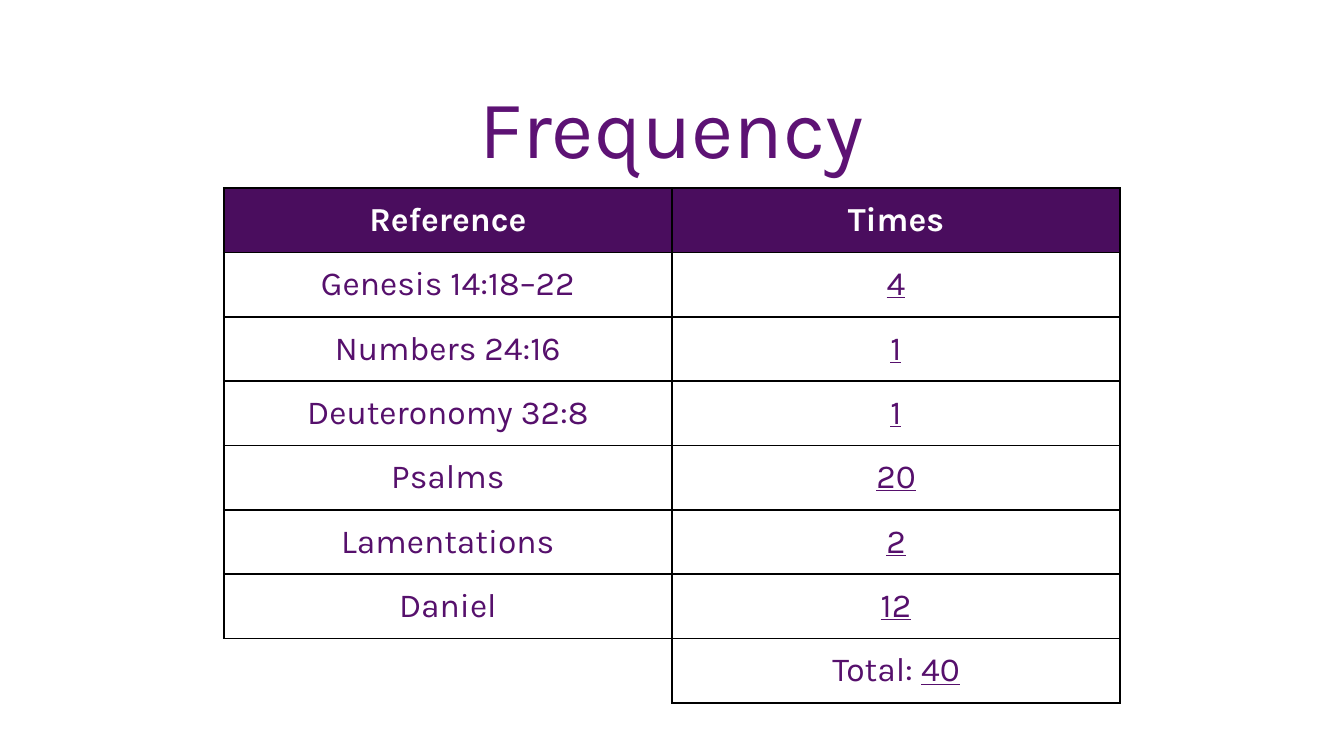
import pptx
import pptx.dml.color
import pptx.enum.text
import pptx.oxml.ns
import pptx.util
from lxml import etree

Inches = pptx.util.Inches
RGBColor = pptx.dml.color.RGBColor

FONT = "Karla"
TITLE_PURPLE = RGBColor(0x5D, 0x12, 0x74)
HEADER_PURPLE = RGBColor(0x4A, 0x0D, 0x5E)
BODY_PURPLE = RGBColor(0x56, 0x10, 0x6C)
WHITE = RGBColor(0xFF, 0xFF, 0xFF)
BLACK = RGBColor(0x00, 0x00, 0x00)

HEADERS = ("Reference", "Times")
FREQUENCIES = (
    ("Genesis 14:18–22", 4),
    ("Numbers 24:16", 1),
    ("Deuteronomy 32:8", 1),
    ("Psalms", 20),
    ("Lamentations", 2),
    ("Daniel", 12),
)
SLIDE_WIDTH = Inches(10)
SLIDE_HEIGHT = SLIDE_WIDTH * 9 // 16
TABLE_WIDTH = Inches(6.67)
TABLE_HEIGHT = Inches(3.83)


def add_text(paragraph, text, size=18, color=BODY_PURPLE, bold=False, underline=False):
    paragraph.alignment = pptx.enum.text.PP_ALIGN.CENTER
    run = paragraph.add_run()
    run.text = text
    run.font.name = FONT
    run.font.size = pptx.util.Pt(size)
    run.font.color.rgb = color
    run.font.bold = bold
    run.font.underline = underline


def set_borders(cell, visible="LRTB"):
    """Draw the named sides in black and hide the others."""
    properties = cell._tc.get_or_add_tcPr()
    for index, side in enumerate("LRTB"):
        line = etree.Element(pptx.oxml.ns.qn(f"a:ln{side}"), w=str(pptx.util.Pt(1)))
        if side in visible:
            fill = etree.SubElement(line, pptx.oxml.ns.qn("a:solidFill"))
            etree.SubElement(fill, pptx.oxml.ns.qn("a:srgbClr"), val=str(BLACK))
        else:
            etree.SubElement(line, pptx.oxml.ns.qn("a:noFill"))
        properties.insert(index, line)


def add_title(slide, text):
    title = slide.shapes.title
    title.left, title.top = Inches(0.5), Inches(0.4)
    title.width, title.height = Inches(9), Inches(1.17)
    title.text_frame.vertical_anchor = pptx.enum.text.MSO_ANCHOR.MIDDLE
    paragraph = title.text_frame.paragraphs[0]
    paragraph.line_spacing = 0.9
    add_text(paragraph, text, size=44, color=TITLE_PURPLE)


def add_frequency_table(slide):
    row_count = len(FREQUENCIES) + 2
    column_count = len(HEADERS)
    left = (SLIDE_WIDTH - TABLE_WIDTH) // 2
    table = slide.shapes.add_table(
        row_count, column_count, left, Inches(1.4), TABLE_WIDTH, TABLE_HEIGHT
    ).table
    table.first_row = False
    table.horz_banding = False
    for column in table.columns:
        column.width = TABLE_WIDTH // column_count
    for row in table.rows:
        row.height = TABLE_HEIGHT // row_count
    for cell in table.iter_cells():
        cell.vertical_anchor = pptx.enum.text.MSO_ANCHOR.MIDDLE
        cell.fill.background()

    def paragraph_at(row, column):
        return table.cell(row, column).text_frame.paragraphs[0]

    for column, header in enumerate(HEADERS):
        fill = table.cell(0, column).fill
        fill.solid()
        fill.fore_color.rgb = HEADER_PURPLE
        add_text(paragraph_at(0, column), header, color=WHITE, bold=True)

    for row, (reference, times) in enumerate(FREQUENCIES, start=1):
        add_text(paragraph_at(row, 0), reference)
        add_text(paragraph_at(row, 1), str(times), underline=True)

    last_row = row_count - 1
    total = sum(times for _, times in FREQUENCIES)
    add_text(paragraph_at(last_row, 1), "Total: ")
    add_text(paragraph_at(last_row, 1), str(total), underline=True)

    for row in range(row_count):
        for column in range(column_count):
            is_empty = row == last_row and column == 0
            set_borders(table.cell(row, column), "RT" if is_empty else "LRTB")


def main():
    presentation = pptx.Presentation()
    presentation.slide_width = SLIDE_WIDTH
    presentation.slide_height = SLIDE_HEIGHT
    slide = presentation.slides.add_slide(presentation.slide_layouts[5])
    add_title(slide, "Frequency")
    add_frequency_table(slide)
    presentation.save("out.pptx")


if __name__ == "__main__":
    main()
